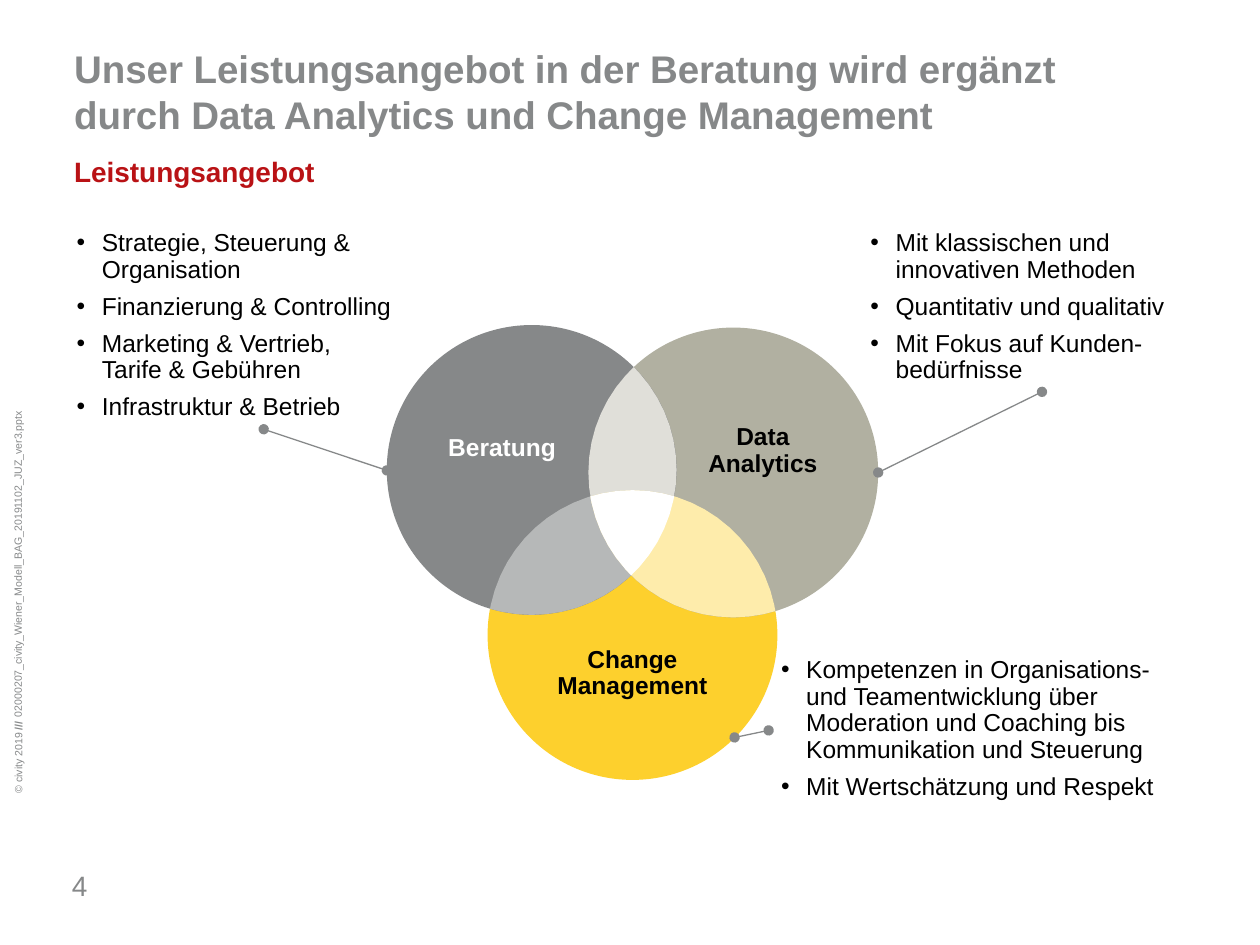
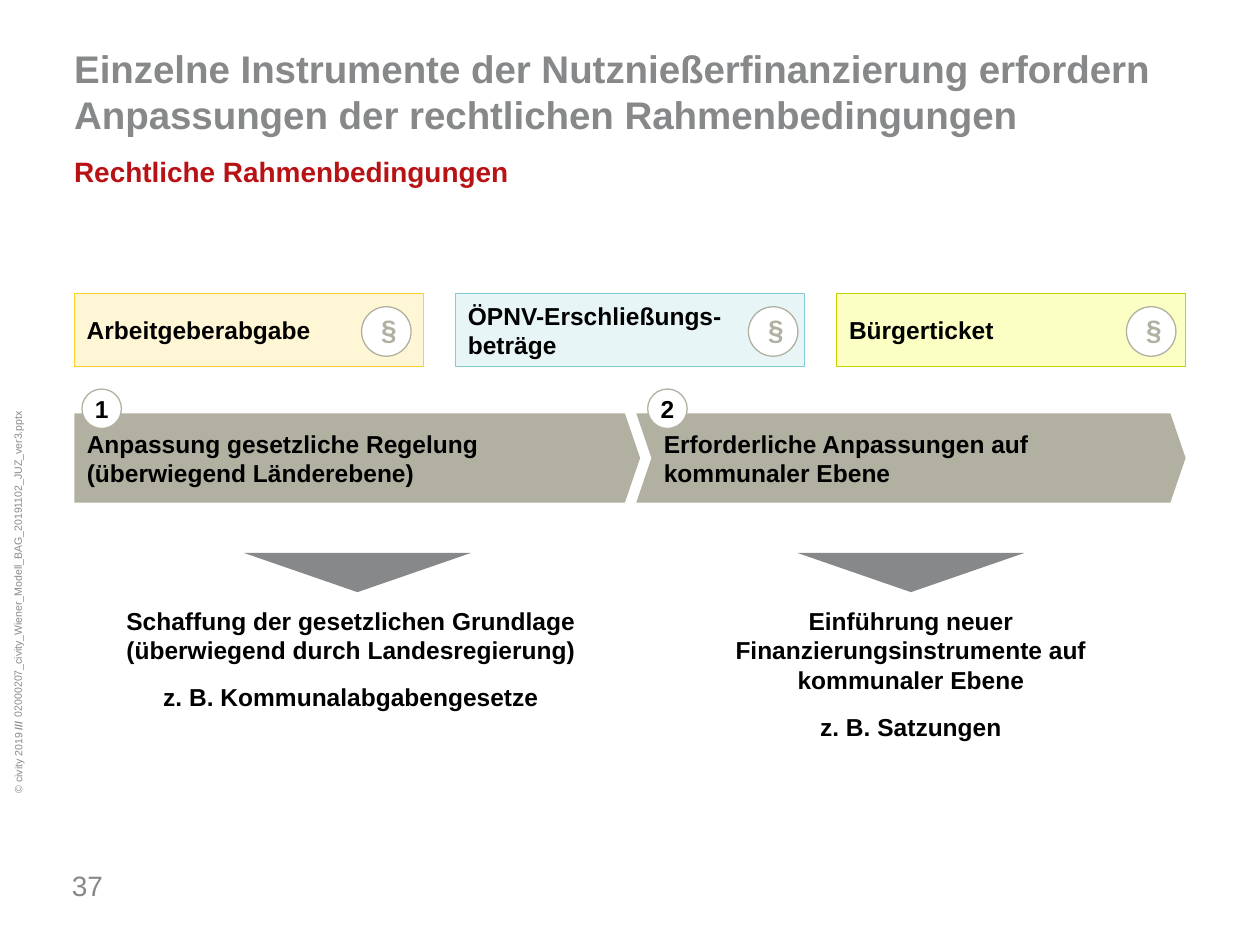
"""Build two consulting slides: a Venn diagram of services and a legal framework process."""
from dataclasses import dataclass, replace
from itertools import combinations
from math import atan2, cos, dist, radians, sin, sqrt
from typing import Optional

from lxml import etree
from pptx import Presentation
from pptx.dml.color import RGBColor
from pptx.enum.shapes import MSO_CONNECTOR, MSO_SHAPE
from pptx.enum.text import MSO_ANCHOR, PP_ALIGN
from pptx.oxml.ns import qn
from pptx.util import Pt

ELLIPSE = MSO_SHAPE.OVAL
RECTANGLE = MSO_SHAPE.RECTANGLE
PENTAGON = MSO_SHAPE.PENTAGON
CHEVRON = MSO_SHAPE.CHEVRON
STRAIGHT = MSO_CONNECTOR.STRAIGHT
TOP, MIDDLE = MSO_ANCHOR.TOP, MSO_ANCHOR.MIDDLE
LEFT, CENTER, RIGHT = PP_ALIGN.LEFT, PP_ALIGN.CENTER, PP_ALIGN.RIGHT

FONT = "Arial"
GRAY, STONE, YELLOW = "868889", "B1B0A1", "FDD02D"
RED, BLACK, WHITE = "B91215", "000000", "FFFFFF"
DEFAULT_INSETS = (7.2, 3.6, 7.2, 3.6)
NO_INSETS = (0, 0, 0, 0)
BULLET_INDENT = 14.4
LINE_WIDTH = 0.75
MARGIN = 42.48


@dataclass(frozen=True)
class Area:
    """Position and size in points."""
    left: float
    top: float
    width: float
    height: float


@dataclass(frozen=True)
class TextStyle:
    """Look of the paragraphs in one frame."""
    size: float = 14
    color: str = BLACK
    bold: bool = False
    align: PP_ALIGN = LEFT
    anchor: MSO_ANCHOR = TOP
    insets: tuple = DEFAULT_INSETS
    line_spacing: Optional[float] = None
    space_before: float = 0
    bullet: bool = False
    wrap: bool = True


@dataclass(frozen=True)
class Circle:
    """A labelled circle of the Venn diagram."""
    label: str
    center: tuple
    fill: str
    color: str
    insets: tuple


@dataclass(frozen=True)
class Callout:
    """A bullet list with the line that ties it to a circle."""
    area: Area
    items: tuple
    start: tuple
    end: tuple


@dataclass(frozen=True)
class Instrument:
    """A financing instrument with its paragraph badge."""
    name: str
    fill: str
    line: str
    badge_left: float


@dataclass(frozen=True)
class Step:
    """A process step with its outcome below."""
    number: str
    title: str
    shape: MSO_SHAPE
    area: Area
    badge_left: float
    arrow_center: float
    outcome_area: Area
    outcomes: tuple


TITLE = TextStyle(size=22, color=GRAY, bold=True)
SUBTITLE = TextStyle(size=16, color=RED, bold=True)
PAGE_NUMBER = TextStyle(size=16, color=GRAY, anchor=MIDDLE, insets=NO_INSETS, wrap=False)
FOOTER = TextStyle(size=6, color=GRAY, insets=NO_INSETS)
BULLETS = TextStyle(line_spacing=0.9, space_before=6, bullet=True)
CIRCLE_LABEL = TextStyle(bold=True, align=CENTER, anchor=MIDDLE, line_spacing=0.9)
BOX_LABEL = TextStyle(bold=True, anchor=MIDDLE)
NUMBER = TextStyle(bold=True, align=CENTER, anchor=MIDDLE, insets=NO_INSETS)
SECTION_SIGN = TextStyle(size=16, color=STONE, bold=True, align=CENTER, anchor=MIDDLE,
                         insets=(7.2, 3.6, 7.2, 5.76))
OUTCOME = TextStyle(bold=True, align=CENTER, space_before=10)

RADIUS = 82.8
ARC_STEP = 6
CHANGE = Circle("Change\nManagement", (361.44, 362.88), YELLOW, BLACK, (5.76, 62.64, 5.76, 18.7))
DATA = Circle("Data\nAnalytics", (419.04, 270), STONE, BLACK, (33.84, 3.6, 0, 28.08))
CONSULTING = Circle("Beratung", (303.84, 268.56), GRAY, WHITE, (0, 3.6, 33.84, 28.08))
CIRCLES = (CHANGE, DATA, CONSULTING)
OVERLAPS = (
    ((CONSULTING, DATA), "E0DFD9"),
    ((CONSULTING, CHANGE), "B6B8B8"),
    ((DATA, CHANGE), "FEECAB"),
    (CIRCLES, WHITE),
)
CALLOUTS = (
    Callout(Area(36.72, 128.16, 228.96, 117.36),
            ("Strategie, Steuerung & Organisation", "Finanzierung & Controlling",
             "Marketing & Vertrieb,\nTarife & Gebühren", "Infrastruktur & Betrieb"),
            (150.7, 245.3), (221.04, 268.8)),
    Callout(Area(490.32, 128.16, 209.52, 95.76),
            ("Mit klassischen und innovativen Methoden", "Quantitativ und qualitativ",
             "Mit Fokus auf Kunden-bedürfnisse"),
            (595.44, 223.92), (501.84, 270)),
    Callout(Area(439.2, 372.24, 244.08, 90),
            ("Kompetenzen in Organisations- und Teamentwicklung über Moderation "
             "und Coaching bis Kommunikation und Steuerung", "Mit Wertschätzung und Respekt"),
            (419.76, 421.4), (439.2, 417.4)),
)

INSTRUMENT_STEP = 217.8
INSTRUMENTS = (
    Instrument("Arbeitgeberabgabe", "FFF6D5", YELLOW, 206.64),
    Instrument("ÖPNV-Erschließungs-beträge", "E7F5F6", "85CCD2", 427.68),
    Instrument("Bürgerticket", "FCFFC3", "C6D100", 643.68),
)
STEP_POINT = 0.17
STEPS = (
    Step("1", "Anpassung gesetzliche Regelung\n(überwiegend Länderebene)", PENTAGON,
         Area(MARGIN, 236.16, 323.28, 51.12), 46.8, 204.3,
         Area(38.88, 342.72, 323.28, 33.12),
         ("Schaffung der gesetzlichen Grundlage (überwiegend durch Landesregierung)",
          "z. B. Kommunalabgabengesetze")),
    Step("2", "Erforderliche Anpassungen auf\nkommunaler Ebene", CHEVRON,
         Area(363.6, 236.16, 313.92, 51.12), 370.08, 520.56,
         Area(378.72, 342.72, 283.68, 33.12),
         ("Einführung neuer Finanzierungsinstrumente auf kommunaler Ebene",
          "z. B. Satzungen")),
)


def rgb(color: str) -> RGBColor:
    """Turn a hex string into a colour."""
    return RGBColor.from_string(color)


def place(area: Area) -> tuple:
    """Return the area as lengths."""
    return Pt(area.left), Pt(area.top), Pt(area.width), Pt(area.height)


def add_bullet(para) -> None:
    """Give a paragraph a hanging bullet."""
    properties = para._p.get_or_add_pPr()
    properties.set("marL", str(Pt(BULLET_INDENT)))
    properties.set("indent", str(-Pt(BULLET_INDENT)))
    etree.SubElement(properties, qn("a:buFont"), typeface=FONT)
    etree.SubElement(properties, qn("a:buChar"), char="•")


def write(shape, texts: tuple, style: TextStyle) -> None:
    """Fill the frame of a shape with styled paragraphs."""
    frame = shape.text_frame
    frame.word_wrap = style.wrap
    frame.vertical_anchor = style.anchor
    (frame.margin_left, frame.margin_top,
     frame.margin_right, frame.margin_bottom) = map(Pt, style.insets)
    for index, text in enumerate(texts):
        para = frame.add_paragraph() if index else frame.paragraphs[0]
        para.text = text
        if style.bullet:
            add_bullet(para)
        para.alignment = style.align
        para.line_spacing = style.line_spacing
        para.space_before = Pt(style.space_before if index else 0)
        para.font.name = FONT
        para.font.size = Pt(style.size)
        para.font.bold = style.bold
        para.font.color.rgb = rgb(style.color)


def add_text(page, area: Area, texts: tuple, style: TextStyle, rotation: float = 0):
    """Add a text box."""
    box = page.shapes.add_textbox(*place(area))
    box.rotation = rotation
    write(box, texts, style)
    return box


def paint(shape, fill: str, line: Optional[str] = None) -> None:
    """Set fill and line of a shape and drop its shadow."""
    shape.shadow.inherit = False
    shape.fill.solid()
    shape.fill.fore_color.rgb = rgb(fill)
    if line:
        shape.line.color.rgb = rgb(line)
        shape.line.width = Pt(LINE_WIDTH)
    else:
        shape.line.fill.background()


def add_shape(page, kind: MSO_SHAPE, area: Area, text: str, style: TextStyle,
              fill: str, line: Optional[str] = None):
    """Add a preset shape with text."""
    shape = page.shapes.add_shape(kind, *place(area))
    paint(shape, fill, line)
    write(shape, (text,), style)
    return shape


def add_outline(page, points: list, fill: str) -> None:
    """Add a filled polygon."""
    corners = [(Pt(x), Pt(y)) for x, y in points]
    builder = page.shapes.build_freeform(*corners[0])
    builder.add_line_segments(corners[1:], close=True)
    paint(builder.convert_to_shape(), fill)


def crossings(first: Circle, second: Circle) -> list:
    """Return the two points where two circles cross."""
    (x1, y1), (x2, y2) = first.center, second.center
    gap = dist(first.center, second.center)
    reach = sqrt(RADIUS ** 2 - (gap / 2) ** 2) / gap
    return [((x1 + x2) / 2 + side * (y1 - y2) * reach,
             (y1 + y2) / 2 + side * (x2 - x1) * reach) for side in (-1, 1)]


def overlap_points(circles: tuple) -> list:
    """Return the boundary of the region common to all circles."""
    points = [point for pair in combinations(circles, 2) for point in crossings(*pair)]
    for circle in circles:
        x, y = circle.center
        points += [(x + RADIUS * cos(radians(angle)), y + RADIUS * sin(radians(angle)))
                   for angle in range(0, 360, ARC_STEP)]
    inside = [point for point in points
              if all(dist(point, circle.center) <= RADIUS + 0.01 for circle in circles)]
    middle_x, middle_y = (sum(values) / len(inside) for values in zip(*inside))
    return sorted(inside, key=lambda point: atan2(point[1] - middle_y, point[0] - middle_x))


def add_dotted_end_line(page, start: tuple, end: tuple) -> None:
    """Add a line with a dot at each end."""
    line = page.shapes.add_connector(STRAIGHT, *map(Pt, start + end))
    line.line.color.rgb = rgb(GRAY)
    line.line.width = Pt(LINE_WIDTH)
    properties = line.element.spPr
    for tag in ("a:headEnd", "a:tailEnd"):
        etree.SubElement(properties.find(qn("a:ln")), qn(tag), type="oval")
    etree.SubElement(properties, qn("a:effectLst"))


def add_page(deck, title: str, subtitle: str, number: str):
    """Add a slide with title, subtitle, page number and side footer."""
    page = deck.slides.add_slide(deck.slide_layouts[6])
    add_text(page, Area(-133.2, 262.8, 286.56, 7.2),
             ("02000207_civity_Wiener_Modell_BAG_20191102_JUZ_ver3.pptx",), FOOTER, 270)
    notice = add_text(page, Area(-12.96, 432, 46.8, 7.2), ("© civity 2019",),
                      replace(FOOTER, align=RIGHT), 270)
    span = notice.text_frame.paragraphs[0].add_run()
    span.text = " ///"
    span.font.bold = True
    add_text(page, Area(35.28, 22.32, 642.24, 51.12), (title,), TITLE)
    add_text(page, Area(35.28, 84.96, 522.72, 23.04), (subtitle,), SUBTITLE)
    add_text(page, Area(41.04, 496.08, 31.68, 19.44), (number,), PAGE_NUMBER)
    return page


def build_services(deck) -> None:
    """Build the Venn diagram of services."""
    page = add_page(deck, "Unser Leistungsangebot in der Beratung wird ergänzt durch "
                    "Data Analytics und Change Management", "Leistungsangebot", "4")
    for circle in CIRCLES:
        x, y = circle.center
        add_shape(page, ELLIPSE, Area(x - RADIUS, y - RADIUS, 2 * RADIUS, 2 * RADIUS), circle.label,
                  replace(CIRCLE_LABEL, color=circle.color, insets=circle.insets), circle.fill)
    for circles, fill in OVERLAPS:
        add_outline(page, overlap_points(circles), fill)
    for callout in CALLOUTS:
        add_text(page, callout.area, callout.items, BULLETS)
        add_dotted_end_line(page, callout.start, callout.end)


def build_legal_framework(deck) -> None:
    """Build the instruments and the two legal steps."""
    page = add_page(deck, "Einzelne Instrumente der Nutznießerfinanzierung erfordern Anpassungen "
                    "der rechtlichen Rahmenbedingungen", "Rechtliche Rahmenbedingungen", "37")
    for index, item in enumerate(INSTRUMENTS):
        area = Area(MARGIN + index * INSTRUMENT_STEP, 167.76, 199.44, 41.76)
        add_shape(page, RECTANGLE, area, item.name, BOX_LABEL, item.fill, item.line)
        add_shape(page, ELLIPSE, Area(item.badge_left, 175.3, 28.3, 28.3), "§",
                  SECTION_SIGN, WHITE, STONE)
    for step in STEPS:
        arrow = add_shape(page, step.shape, step.area, step.title, BOX_LABEL, STONE)
        arrow.adjustments[0] = STEP_POINT
        add_shape(page, ELLIPSE, Area(step.badge_left, 222.3, 22.6, 22.6), step.number,
                  NUMBER, WHITE, STONE)
        center = step.arrow_center
        add_outline(page, [(center - 64.8, 316), (center + 64.8, 316), (center, 338.4)], GRAY)
        add_text(page, step.outcome_area, step.outcomes, OUTCOME)


def main() -> None:
    """Create and save the deck."""
    deck = Presentation()
    deck.slide_width, deck.slide_height = Pt(720), Pt(540)
    build_services(deck)
    build_legal_framework(deck)
    deck.save("out.pptx")


if __name__ == "__main__":
    main()
